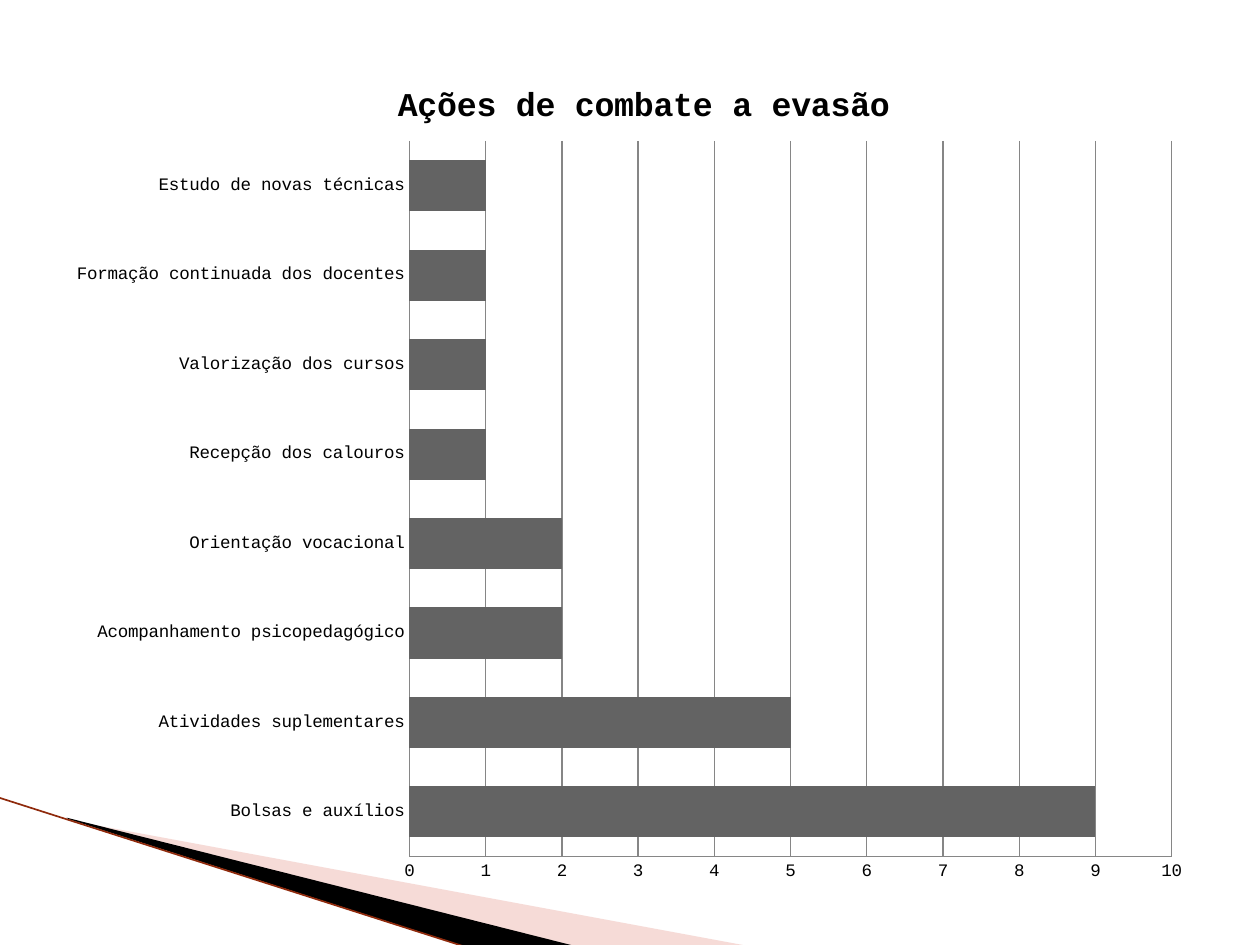
from dataclasses import dataclass

from lxml.etree import SubElement
from pptx import Presentation
from pptx.chart.data import CategoryChartData
from pptx.dml.color import RGBColor
from pptx.enum.chart import XL_CHART_TYPE, XL_TICK_MARK
from pptx.enum.shapes import MSO_CONNECTOR
from pptx.oxml import parse_xml
from pptx.oxml.ns import nsdecls, qn
from pptx.util import Inches, Pt

COLORS = {
    "pink": "E9A59D",
    "black": "000000",
    "rust": "8F2A0C",
    "bar": "636363",
    "grid": "868686",
}
FONT = "Courier New"

# The slide is a grid of 100 columns by 75 rows
CELL = Inches(0.1)
COLUMNS, ROWS = 100, 75


@dataclass(frozen=True)
class Wedge:
    points: tuple[tuple[float, float], ...]
    color: str
    opacity: int = 100


@dataclass(frozen=True)
class Box:
    left: float
    top: float
    width: float
    height: float


WEDGES = (
    Wedge(((5.5, 65.1), (59.5, 75.1), (45.6, 75.1), (5.5, 65)), "pink", 40),
    Wedge(((5.3, 64.9), (45.7, 75.1), (37.2, 75.2), (5.4, 65)), "black"),
)
EDGE = ((-0.1, 63.3), (37.1, 75.2))
CHART = Box(4.3, 3.6, 91.3, 67.7)
PLOT = Box(32.5, 11.2, 60.5, 56.8)
TITLE_CORNER = (31.1, 6.3)

ACTIONS = {
    "Bolsas e auxílios": 9,
    "Atividades suplementares": 5,
    "Acompanhamento psicopedagógico": 2,
    "Orientação vocacional": 2,
    "Recepção dos calouros": 1,
    "Valorização dos cursos": 1,
    "Formação continuada dos docentes": 1,
    "Estudo de novas técnicas": 1,
}


def rgb(name: str) -> RGBColor:
    return RGBColor.from_string(COLORS[name])


def cells(count: float) -> int:
    return round(count * CELL)


def draw_wedge(slide, wedge: Wedge) -> None:
    points = [(cells(x), cells(y)) for x, y in wedge.points]
    builder = slide.shapes.build_freeform(*points[0])
    builder.add_line_segments(points[1:], close=True)
    shape = builder.convert_to_shape()
    shape.shadow.inherit = False
    shape.fill.solid()
    shape.fill.fore_color.rgb = rgb(wedge.color)
    shape.line.fill.background()
    if wedge.opacity < 100:
        color = shape.fill._xPr.find(".//" + qn("a:srgbClr"))
        SubElement(color, qn("a:alpha")).set("val", str(wedge.opacity * 1000))


def draw_edge(slide) -> None:
    start, end = EDGE
    connector = slide.shapes.add_connector(
        MSO_CONNECTOR.STRAIGHT, *map(cells, start + end))
    connector.line.color.rgb = rgb("rust")
    connector.line.width = Pt(0.95)
    SubElement(connector._element.spPr, qn("a:effectLst"))


def manual_layout(x: float, y: float, size: tuple[float, ...] = ()):
    """Place a chart part at grid position x, y, measured from the slide's corner."""
    fields = {"xMode": "edge", "yMode": "edge",
              "x": (x - CHART.left) / CHART.width,
              "y": (y - CHART.top) / CHART.height}
    target = ""
    if size:
        target = '<c:layoutTarget val="inner"/>'
        fields |= {"w": size[0] / CHART.width, "h": size[1] / CHART.height}
    body = "".join(f'<c:{tag} val="{value}"/>' for tag, value in fields.items())
    return parse_xml(f'<c:layout {nsdecls("c")}><c:manualLayout>{target}{body}'
                     "</c:manualLayout></c:layout>")


def set_layout(parent, layout, position: int) -> None:
    for previous in parent.findall(qn("c:layout")):
        parent.remove(previous)
    parent.insert(position, layout)


def style_line(line) -> None:
    line.color.rgb = rgb("grid")
    line.width = Pt(0.75)


def style_font(font, size: float, bold: bool = False) -> None:
    font.name = FONT
    font.size = Pt(size)
    font.bold = bold
    font.color.rgb = rgb("black")


def draw_chart(slide) -> None:
    data = CategoryChartData()
    data.categories = list(ACTIONS)
    data.add_series("Series 1", list(ACTIONS.values()))
    chart = slide.shapes.add_chart(
        XL_CHART_TYPE.BAR_CLUSTERED, cells(CHART.left), cells(CHART.top),
        cells(CHART.width), cells(CHART.height), data).chart
    style_font(chart.font, 10)
    chart.has_legend = False

    # Title
    chart.has_title = True
    paragraph = chart.chart_title.text_frame.paragraphs[0]
    paragraph.text = "Ações de combate a evasão"
    style_font(paragraph.runs[0].font, 19, bold=True)
    set_layout(chart.chart_title._element, manual_layout(*TITLE_CORNER), 1)

    # Bars
    plot = chart.plots[0]
    plot.vary_by_categories = False
    plot.gap_width = 75
    plot.overlap = -25
    fill = plot.series[0].format.fill
    fill.solid()
    fill.fore_color.rgb = rgb("bar")

    # Axes and gridlines
    for axis in (chart.category_axis, chart.value_axis):
        axis.major_tick_mark = XL_TICK_MARK.NONE
        axis.minor_tick_mark = XL_TICK_MARK.NONE
        style_line(axis.format.line)
    chart.value_axis.minimum_scale = 0
    chart.value_axis.maximum_scale = 10
    chart.value_axis.major_unit = 1
    chart.value_axis.has_major_gridlines = True
    style_line(chart.value_axis.major_gridlines.format.line)

    plot_area = chart._chartSpace.chart.plotArea
    set_layout(plot_area,
               manual_layout(PLOT.left, PLOT.top, (PLOT.width, PLOT.height)), 0)


def main() -> None:
    presentation = Presentation()
    presentation.slide_width = cells(COLUMNS)
    presentation.slide_height = cells(ROWS)
    slide = presentation.slides.add_slide(presentation.slide_layouts[6])

    # Corner decoration, behind the chart
    for wedge in WEDGES:
        draw_wedge(slide, wedge)
    draw_edge(slide)

    draw_chart(slide)
    presentation.save("out.pptx")


if __name__ == "__main__":
    main()
